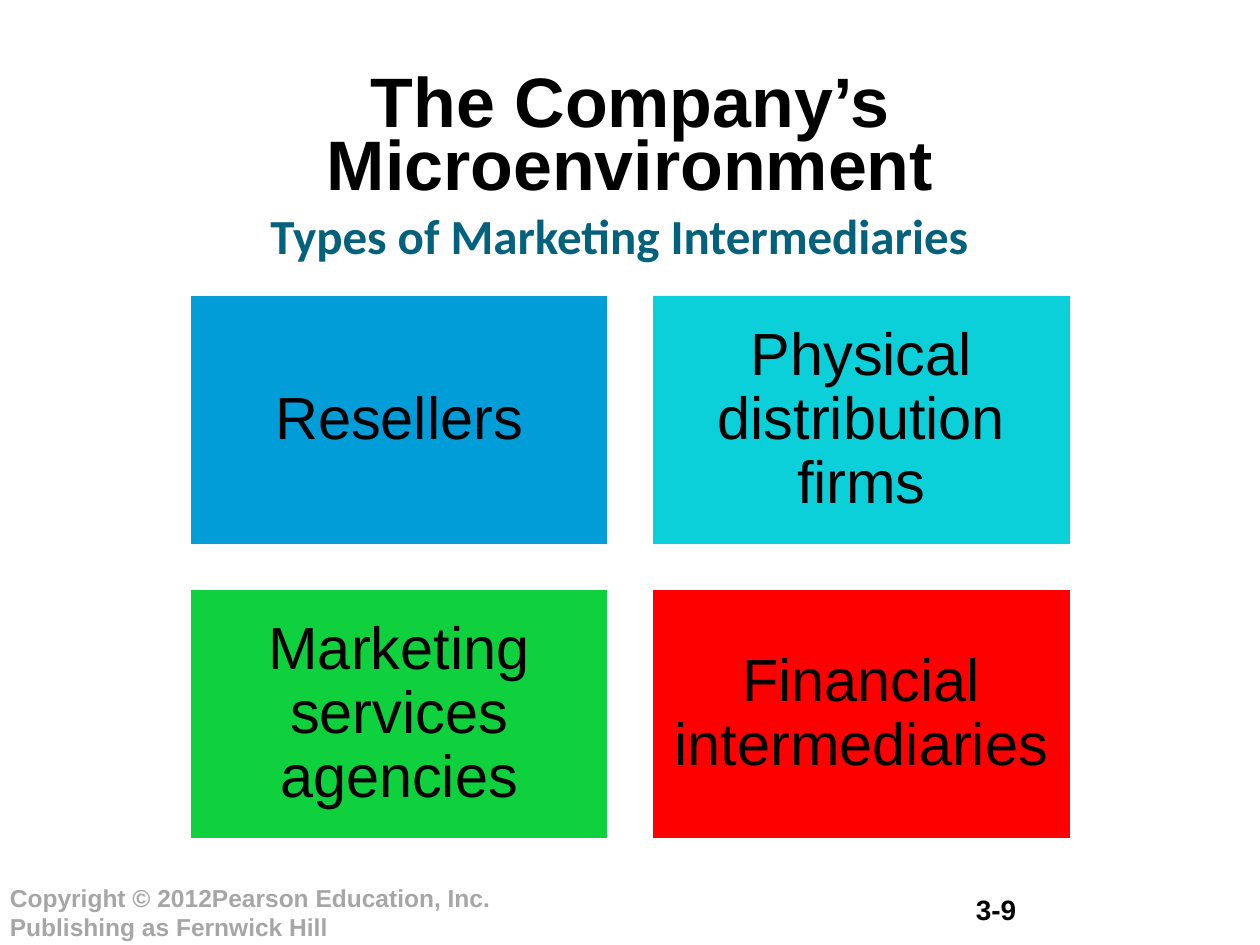
from pptx import Presentation
from pptx.dml.color import RGBColor
from pptx.enum import shapes, text
from pptx.util import Cm, Pt

# Content
TITLE = "The Company’s Microenvironment"
SUBTITLE = "Types of Marketing Intermediaries"
INTERMEDIARIES = [
    ("Resellers", "blue"),
    ("Physical distribution firms", "cyan"),
    ("Marketing services agencies", "green"),
    ("Financial intermediaries", "red"),
]
COPYRIGHT = ["Copyright © 2012Pearson Education, Inc.", "Publishing as Fernwick Hill"]
PAGE_NUMBER = "3-9"

COLORS = {
    "black": "000000", "white": "FFFFFF", "gray": "A6A6A6", "teal": "04617B",
    "blue": "009DD9", "cyan": "0BD0D9", "green": "0FD13D", "red": "FF0000",
}

# Card grid, in centimetres
COLUMNS = 2
GRID_LEFT, GRID_TOP = 3.81, 5.93
CARD_WIDTH, CARD_HEIGHT, GAP = 8.47, 5.08, 0.85


def color(name):
    return RGBColor.from_string(COLORS[name])


def write(shape, lines, size, font="Arial", fill="black", bold=False, centered=True,
          middle=False, spacing=1.0, inset=(0, 0)):
    """Fill a shape with one paragraph per line; inset is (sides, top and bottom) in cm."""
    frame = shape.text_frame
    frame.word_wrap = True
    frame.margin_left = frame.margin_right = Cm(inset[0])
    frame.margin_top = frame.margin_bottom = Cm(inset[1])
    frame.vertical_anchor = text.MSO_ANCHOR.MIDDLE if middle else text.MSO_ANCHOR.TOP
    for index, line in enumerate(lines):
        paragraph = frame.add_paragraph() if index else frame.paragraphs[0]
        paragraph.alignment = text.PP_ALIGN.CENTER if centered else text.PP_ALIGN.LEFT
        paragraph.line_spacing = spacing
        run = paragraph.add_run()
        run.text = line
        run.font.name = font
        run.font.size = Pt(size)
        run.font.bold = bold
        run.font.color.rgb = color(fill)


presentation = Presentation()
presentation.slide_width, presentation.slide_height = Cm(25.4), Cm(19.05)
slide = presentation.slides.add_slide(presentation.slide_layouts[6])


def add_text(left, top, width, height, lines, **style):
    box = slide.shapes.add_textbox(Cm(left), Cm(top), Cm(width), Cm(height))
    write(box, lines, **style)


# Footer
add_text(17.35, 17.98, 5.46, 0.56, [PAGE_NUMBER], size=16, bold=True, spacing=1.02)
add_text(0.2, 17.78, 12.5, 1.27, COPYRIGHT, size=14, fill="gray", bold=True,
         centered=False, spacing=1.02)

# Title and subtitle
add_text(1.9, 1.27, 21.6, 3.18, [TITLE], size=40, bold=True, middle=True,
         spacing=Pt(36), inset=(0.25, 0.13))
add_text(2.54, 4.02, 19.89, 1.07, [SUBTITLE], size=28, font="Calibri", fill="teal",
         bold=True, inset=(0.25, 0.13))

# Cards
for index, (label, fill) in enumerate(INTERMEDIARIES):
    row, column = divmod(index, COLUMNS)
    card = slide.shapes.add_shape(
        shapes.MSO_SHAPE.RECTANGLE,
        Cm(GRID_LEFT + column * (CARD_WIDTH + GAP)),
        Cm(GRID_TOP + row * (CARD_HEIGHT + GAP)),
        Cm(CARD_WIDTH), Cm(CARD_HEIGHT))
    card.shadow.inherit = False
    card.fill.solid()
    card.fill.fore_color.rgb = color(fill)
    card.line.color.rgb = color("white")
    card.line.width = Pt(2)
    write(card, [label], size=34, middle=True, spacing=0.9, inset=(0.36, 0.36))

presentation.save("out.pptx")
